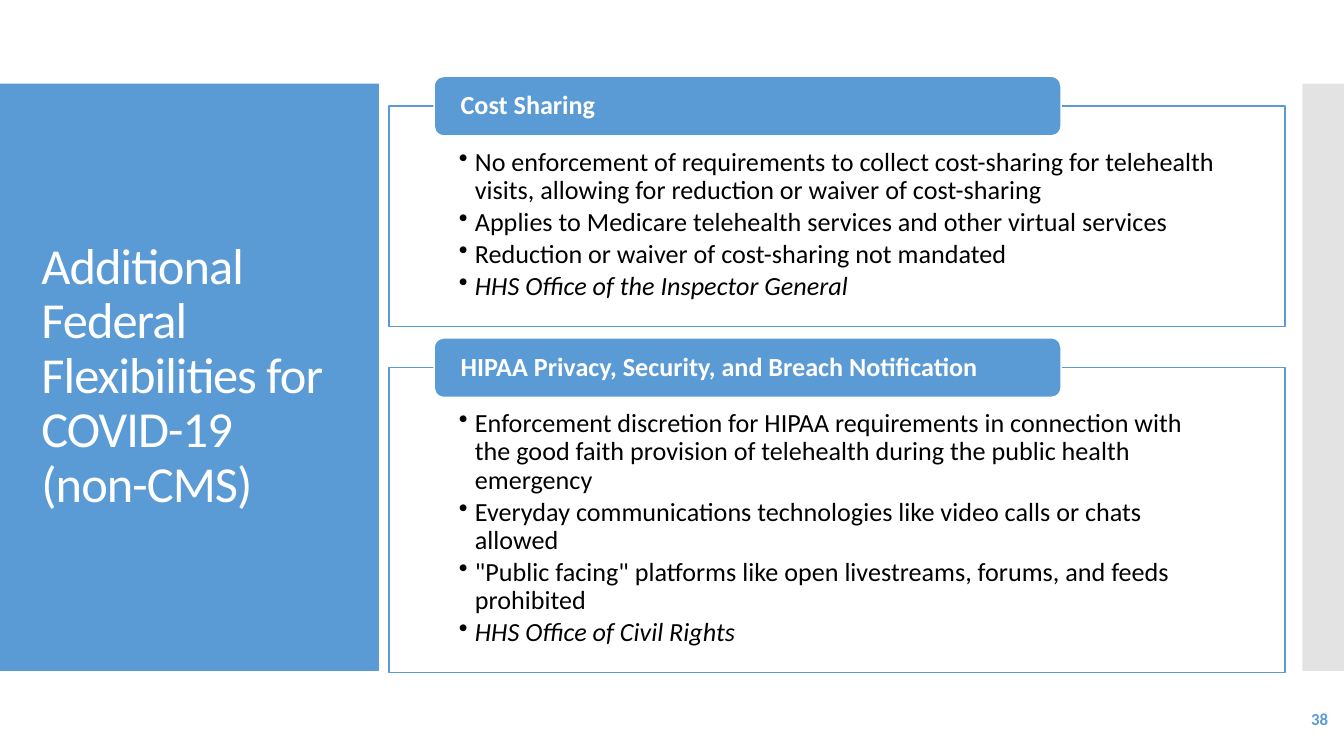
from lxml import etree
from pptx import Presentation
from pptx.dml.color import RGBColor
from pptx.enum.shapes import MSO_SHAPE
from pptx.enum.text import MSO_ANCHOR, PP_ALIGN
from pptx.oxml.ns import qn
from pptx.util import Inches, Pt

RECTANGLE = MSO_SHAPE.RECTANGLE
ROUNDED = MSO_SHAPE.ROUNDED_RECTANGLE
TOP, MIDDLE = MSO_ANCHOR.TOP, MSO_ANCHOR.MIDDLE
LEFT, RIGHT = PP_ALIGN.LEFT, PP_ALIGN.RIGHT

BLUE = RGBColor(0x5B, 0x9B, 0xD5)
GRAY = RGBColor(0xC8, 0xC8, 0xC8)
WHITE = RGBColor(0xFF, 0xFF, 0xFF)
BLACK = RGBColor(0x00, 0x00, 0x00)

CELL = Inches(0.1)
BAND_TOP, BAND_HEIGHT = 6.23, 43.7
PANEL_LEFT, PANEL_WIDTH = 28.97, 66.66
TAB_LEFT, TAB_WIDTH, TAB_HEIGHT = 32.3, 46.66, 4.45

SECTIONS = [
    (7.9, 16.38, "Cost Sharing", [
        "No enforcement of requirements to collect cost-sharing for telehealth visits, "
        "allowing for reduction or waiver of cost-sharing",
        "Applies to Medicare telehealth services and other virtual services",
        "Reduction or waiver of cost-sharing not mandated",
    ], "HHS Office of the Inspector General"),
    (27.36, 22.68, "HIPAA Privacy, Security, and Breach Notification", [
        "Enforcement discretion for HIPAA requirements in connection with the good faith "
        "provision of telehealth during the public health emergency",
        "Everyday communications technologies like video calls or chats allowed",
        "\"Public facing\" platforms like open livestreams, forums, and feeds prohibited",
    ], "HHS Office of Civil Rights"),
]


class SlideBuilder:
    font_name = "Calibri"
    line_spacing = 0.9

    def __init__(self, slide):
        self.slide = slide

    def box(self, kind, left, top, width, height, fill, line=None, opacity=None):
        shape = self.slide.shapes.add_shape(
            kind, *(round(CELL * length) for length in (left, top, width, height)))
        shape.shadow.inherit = False
        shape.fill.solid()
        shape.fill.fore_color.rgb = fill
        if opacity:
            color = shape.fill._xPr.find(".//" + qn("a:srgbClr"))
            etree.SubElement(color, qn("a:alpha"), val=str(opacity * 1000))
        if line is None:
            shape.line.fill.background()
        else:
            shape.line.color.rgb = line
            shape.line.width = Pt(0.85)
        return shape

    def text_box(self, left, top, width, height):
        return self.slide.shapes.add_textbox(
            *(round(CELL * length) for length in (left, top, width, height)))

    def frame(self, shape, anchor, side=1, top=0.5, bottom=0.5):
        frame = shape.text_frame
        frame.word_wrap = True
        frame.vertical_anchor = anchor
        frame.margin_left = frame.margin_right = round(CELL * side)
        frame.margin_top = round(CELL * top)
        frame.margin_bottom = round(CELL * bottom)
        return frame

    def style(self, paragraph, size, color, bold=False, italic=False, align=LEFT):
        paragraph.alignment = align
        paragraph.line_spacing = self.line_spacing
        font = paragraph.font
        font.name, font.size, font.bold, font.italic = self.font_name, Pt(size), bold, italic
        font.color.rgb = color

    def title(self, text):
        frame = self.frame(self.text_box(2.1, 9.2, 24.2, 37.7), MIDDLE)
        paragraph = frame.paragraphs[0]
        paragraph.text = text
        self.style(paragraph, 27, WHITE)
        for run in paragraph.runs:
            run._r.get_or_add_rPr().set("spc", "-50")

    def page_number(self, text):
        frame = self.frame(self.text_box(87.2, 52.1, 12.6, 3), MIDDLE)
        paragraph = frame.paragraphs[0]
        paragraph.text = text
        self.style(paragraph, 9, BLUE, bold=True, align=RIGHT)

    def bullet(self, paragraph, text, italic=False):
        paragraph.text = text
        properties = paragraph._p.get_or_add_pPr()
        indent = round(CELL * 1.2)
        properties.set("marL", str(indent))
        properties.set("indent", str(-indent))
        etree.SubElement(properties, qn("a:buChar"), char="•")
        paragraph.space_after = Pt(2)
        self.style(paragraph, 14, BLACK, italic=italic)

    def section(self, top, height, heading, points, agency):
        panel = self.box(RECTANGLE, PANEL_LEFT, top, PANEL_WIDTH, height, WHITE, BLUE, 90)
        frame = self.frame(panel, TOP, 5.17, 3.15, 1.08)
        for index, text in enumerate([*points, agency]):
            paragraph = frame.add_paragraph() if index else frame.paragraphs[0]
            self.bullet(paragraph, text, italic=text == agency)
        tab = self.box(ROUNDED, TAB_LEFT, top - TAB_HEIGHT / 2, TAB_WIDTH, TAB_HEIGHT,
                       BLUE, WHITE)
        paragraph = self.frame(tab, MIDDLE, 1.76, 0, 0).paragraphs[0]
        paragraph.text = heading
        self.style(paragraph, 14, WHITE, bold=True)


def main():
    presentation = Presentation()
    presentation.slide_width = Inches(10)
    presentation.slide_height = Inches(10) * 9 // 16
    builder = SlideBuilder(presentation.slides.add_slide(presentation.slide_layouts[6]))
    builder.box(RECTANGLE, 0, BAND_TOP, 28.2, BAND_HEIGHT, BLUE)
    builder.box(RECTANGLE, 96.9, BAND_TOP, 3.1, BAND_HEIGHT, GRAY, opacity=50)
    builder.title("Additional\vFederal Flexibilities for COVID-19 (non-CMS)")
    builder.page_number("38")
    for section in SECTIONS:
        builder.section(*section)
    presentation.save("out.pptx")


if __name__ == "__main__":
    main()
